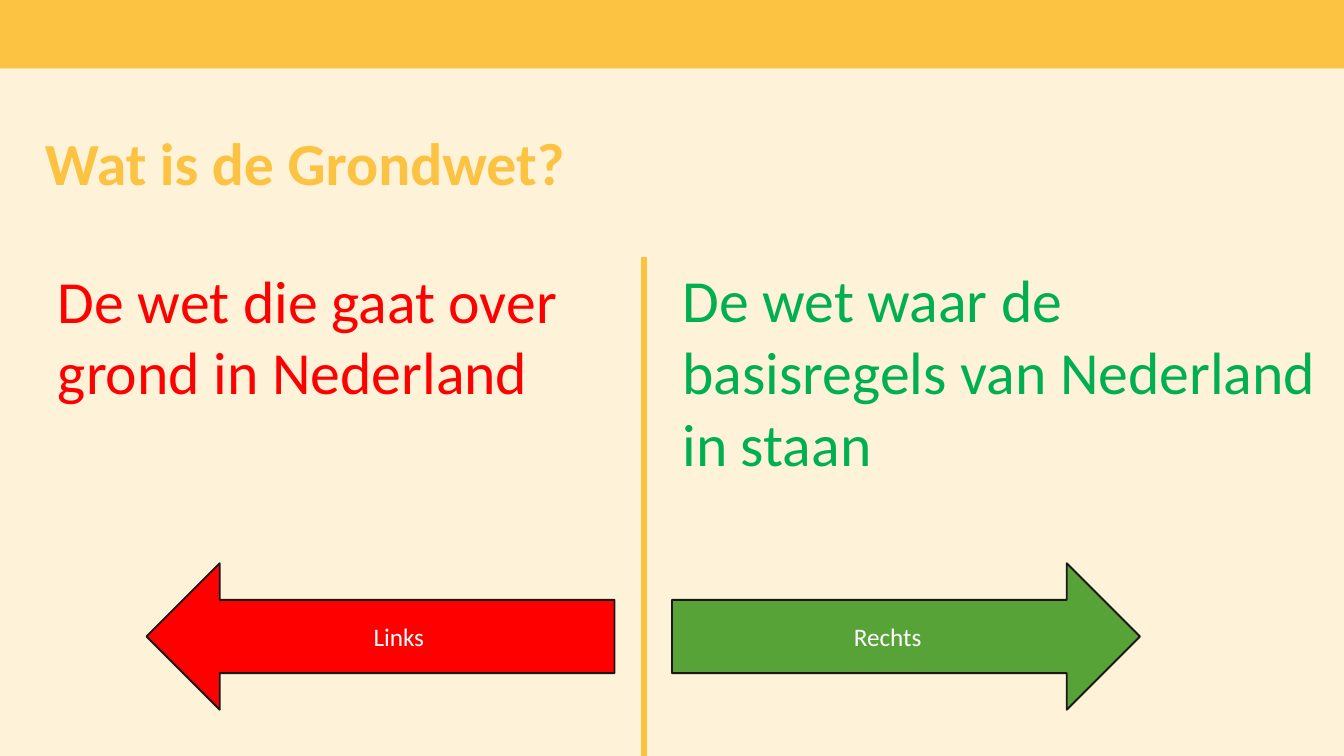
from dataclasses import dataclass

import pptx
import pptx.dml.color
import pptx.enum.shapes
import pptx.enum.text
import pptx.oxml.ns
import pptx.oxml.xmlchemy
import pptx.slide
import pptx.text.text
import pptx.util

Pt = pptx.util.Pt
Color = pptx.dml.color.RGBColor
Kind = pptx.enum.shapes.MSO_SHAPE

CREAM = Color(0xFE, 0xF3, 0xD9)
GOLD = Color(0xFC, 0xC2, 0x41)
RED = Color(0xFF, 0x00, 0x00)
LIME = Color(0x00, 0xB0, 0x50)
GREEN = Color(0x58, 0xA3, 0x37)
INK = Color(0x1A, 0x19, 0x18)
WHITE = Color(0xFF, 0xFF, 0xFF)
FONT = "Calibri"
WIDTH, HEIGHT = 720, 405
TOP = 137.5
MID = 345


@dataclass
class Label:
    text: str
    left: float
    top: float
    width: float
    height: float
    color: Color


@dataclass
class Arrow:
    text: str
    kind: Kind
    left: float
    color: Color


ANSWERS = [
    Label("De wet die gaat over grond in Nederland", 24, TOP, 321, 85, RED),
    Label("De wet waar de basisregels van Nederland in staan", 358.5, TOP, 361.5, 124, LIME),
]
ARROWS = [
    Arrow("Links", Kind.LEFT_ARROW, 78.5, RED),
    Arrow("Rechts", Kind.RIGHT_ARROW, 360, GREEN),
]


def style(para: pptx.text.text._Paragraph, size: float, color: Color) -> None:
    para.font.name = FONT
    para.font.size = Pt(size)
    para.font.color.rgb = color


def write(slide: pptx.slide.Slide, label: Label) -> pptx.text.text.TextFrame:
    box = slide.shapes.add_textbox(
        Pt(label.left), Pt(label.top), Pt(label.width), Pt(label.height)
    )
    frame = box.text_frame
    frame.word_wrap = True
    frame.text = label.text
    style(frame.paragraphs[0], 32, label.color)
    return frame


def head(slide: pptx.slide.Slide) -> None:
    band = slide.shapes.add_shape(Kind.RECTANGLE, 0, 0, Pt(WIDTH), Pt(36.75))
    band.shadow.inherit = False
    band.fill.solid()
    band.fill.fore_color.rgb = GOLD
    band.line.fill.background()
    frame = write(slide, Label("Wat is de Grondwet?", 24, 66.25, 289.5, 70.5, GOLD))
    frame.margin_left = frame.margin_right = frame.margin_bottom = 0
    para = frame.paragraphs[0]
    para.line_spacing = Pt(36)
    para.font.bold = True


def divide(slide: pptx.slide.Slide) -> None:
    line = slide.shapes.add_connector(
        pptx.enum.shapes.MSO_CONNECTOR.STRAIGHT, Pt(MID), Pt(TOP), Pt(MID), Pt(HEIGHT)
    )
    line.line.color.rgb = GOLD
    line.line.width = Pt(3)
    props = line._element.spPr
    props.append(props.makeelement(pptx.oxml.ns.qn("a:effectLst"), {}))


def point(slide: pptx.slide.Slide, arrow: Arrow) -> None:
    shape = slide.shapes.add_shape(
        arrow.kind, Pt(arrow.left), Pt(301.75), Pt(250.75), Pt(78.5)
    )
    shape.shadow.inherit = False
    shape.fill.solid()
    shape.fill.fore_color.rgb = arrow.color
    shape.line.color.rgb = INK
    shape.line.width = Pt(1)
    frame = shape.text_frame
    frame.text = arrow.text
    frame.vertical_anchor = pptx.enum.text.MSO_ANCHOR.MIDDLE
    para = frame.paragraphs[0]
    para.alignment = pptx.enum.text.PP_ALIGN.CENTER
    style(para, 13.5, WHITE)


def main() -> None:
    deck = pptx.Presentation()
    deck.slide_width, deck.slide_height = Pt(WIDTH), Pt(HEIGHT)
    slide = deck.slides.add_slide(deck.slide_layouts[6])
    slide.background.fill.solid()
    slide.background.fill.fore_color.rgb = CREAM
    head(slide)
    divide(slide)
    for label in ANSWERS:
        write(slide, label)
    for arrow in ARROWS:
        point(slide, arrow)
    deck.save("out.pptx")


if __name__ == "__main__":
    main()
